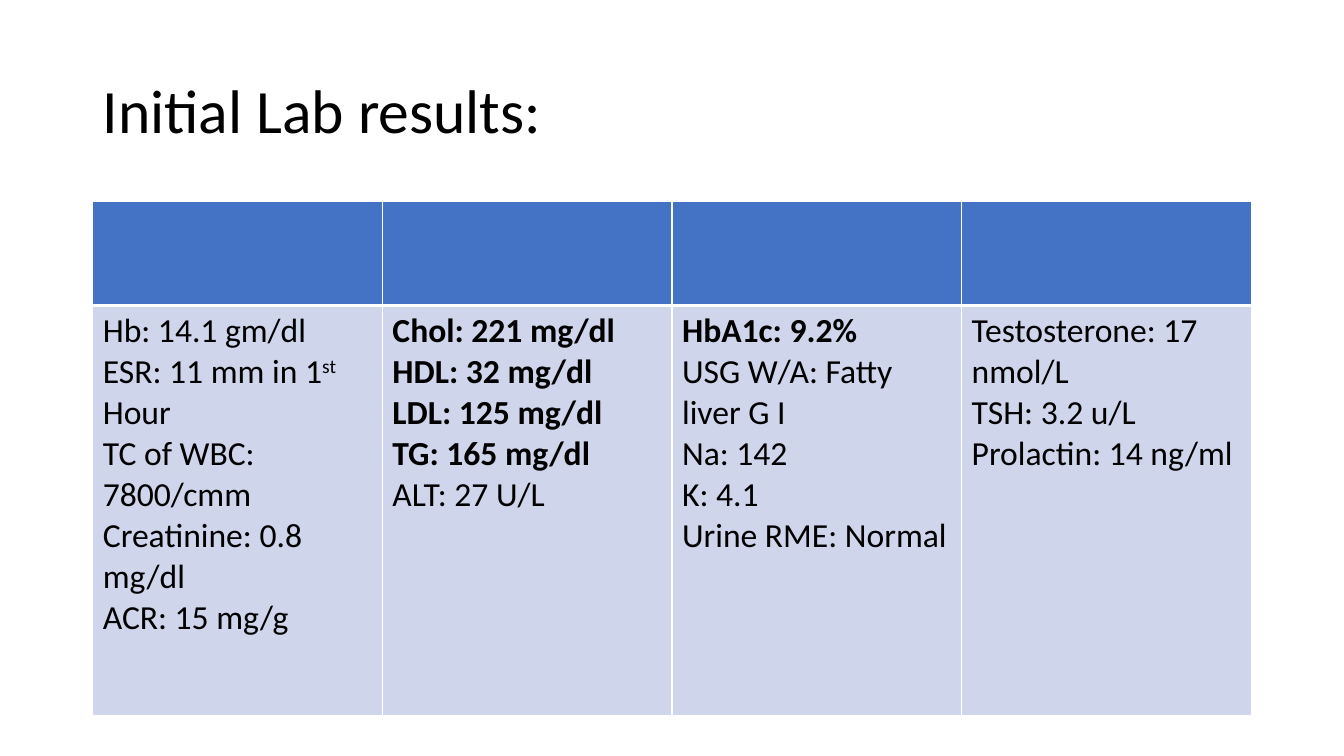
from dataclasses import dataclass

from lxml.etree import fromstring
from pptx import Presentation
from pptx.dml.color import RGBColor as Rgb
from pptx.enum.text import MSO_ANCHOR as Anchor
from pptx.oxml.ns import nsdecls
from pptx.util import Inches, Pt


@dataclass(frozen=True)
class Theme:
    """Fonts, type sizes, colours and rule widths of the slide."""
    font: str = "Calibri"
    title_size: int = 44
    body_size: int = 24
    ink: str = "000000"
    header: str = "4472C4"
    body: str = "CFD5EA"
    rule: str = "FFFFFF"
    thin: int = 1
    thick: int = 3


class LabSlide:
    """Draws on one slide with a grid of four columns and half-inch rows."""
    columns, margin, row_height = 4, 0.92, 0.5

    def __init__(self, deck, theme):
        """Add a blank slide and measure the grid."""
        self.theme = theme
        self.slide = deck.slides.add_slide(deck.slide_layouts[6])
        self.left = Inches(self.margin)
        self.width = deck.slide_width - 2 * self.left

    def rows(self, count):
        """Return the height of a number of grid rows."""
        return Inches(count * self.row_height)

    def style(self, paragraph, size, bold=False):
        """Set the font of a whole paragraph."""
        font = paragraph.font
        font.name, font.size, font.bold = self.theme.font, Pt(size), bold
        font.color.rgb = Rgb.from_string(self.theme.ink)

    def title(self, text, top, height):
        """Add the heading across all columns."""
        frame = self.slide.shapes.add_textbox(
            self.left, self.rows(top), self.width, self.rows(height)).text_frame
        frame.word_wrap = True
        frame.vertical_anchor = Anchor.MIDDLE
        heading = frame.paragraphs[0]
        heading.text = text
        heading.line_spacing = 0.9
        self.style(heading, self.theme.title_size)

    def paint(self, cell, fill, top, bottom):
        """Fill a cell and rule its four sides."""
        cell.fill.solid()
        cell.fill.fore_color.rgb = Rgb.from_string(fill)
        sides = {"L": self.theme.thin, "R": self.theme.thin, "T": top, "B": bottom}
        for place, (side, points) in enumerate(sides.items()):
            cell._tc.get_or_add_tcPr().insert(place, fromstring(
                f'<a:ln{side} {nsdecls("a")} w="{Pt(points)}"><a:solidFill>'
                f'<a:srgbClr val="{self.theme.rule}"/></a:solidFill></a:ln{side}>'))

    def list_results(self, cell, results):
        """Add results as paragraphs; * marks bold and ^ encloses superscript."""
        frame = cell.text_frame
        for index, result in enumerate(results):
            line = frame.add_paragraph() if index else frame.paragraphs[0]
            self.style(line, self.theme.body_size, result.startswith("*"))
            for part, text in enumerate(result.lstrip("*").split("^")):
                run = line.add_run()
                run.text = text
                if part % 2:
                    run._r.get_or_add_rPr().set("baseline", "30000")

    def table(self, groups, top, header_height, body_height):
        """Add a table with an empty header row and one column per group."""
        theme = self.theme
        table = self.slide.shapes.add_table(
            2, self.columns, self.left, self.rows(top), self.width,
            self.rows(header_height + body_height)).table
        table.rows[0].height = self.rows(header_height)
        table.rows[1].height = self.rows(body_height)
        for column, results in enumerate(groups):
            self.paint(table.cell(0, column), theme.header, theme.thin, theme.thick)
            self.paint(table.cell(1, column), theme.body, theme.thick, theme.thin)
            self.list_results(table.cell(1, column), results)


LAB_RESULTS = [
    ["Hb: 14.1 gm/dl", "ESR: 11 mm in 1^st^ Hour", "TC of WBC: 7800/cmm",
     "Creatinine: 0.8 mg/dl", "ACR: 15 mg/g"],
    ["*Chol: 221 mg/dl", "*HDL: 32 mg/dl", "*LDL: 125 mg/dl",
     "*TG: 165 mg/dl", "ALT: 27 U/L"],
    ["*HbA1c: 9.2%", "USG W/A: Fatty liver G I", "Na: 142", "K: 4.1",
     "Urine RME: Normal"],
    ["Testosterone: 17 nmol/L", "TSH: 3.2 u/L", "Prolactin: 14 ng/ml"],
]


def main():
    """Build and save the slide."""
    deck = Presentation()
    deck.slide_width, deck.slide_height = Inches(13.33), Inches(7.5)
    lab = LabSlide(deck, Theme())
    lab.title("Initial Lab results:", top=0.8, height=2.9)
    lab.table(LAB_RESULTS, top=4, header_height=2.06, body_height=8.14)
    deck.save("out.pptx")


if __name__ == "__main__":
    main()
